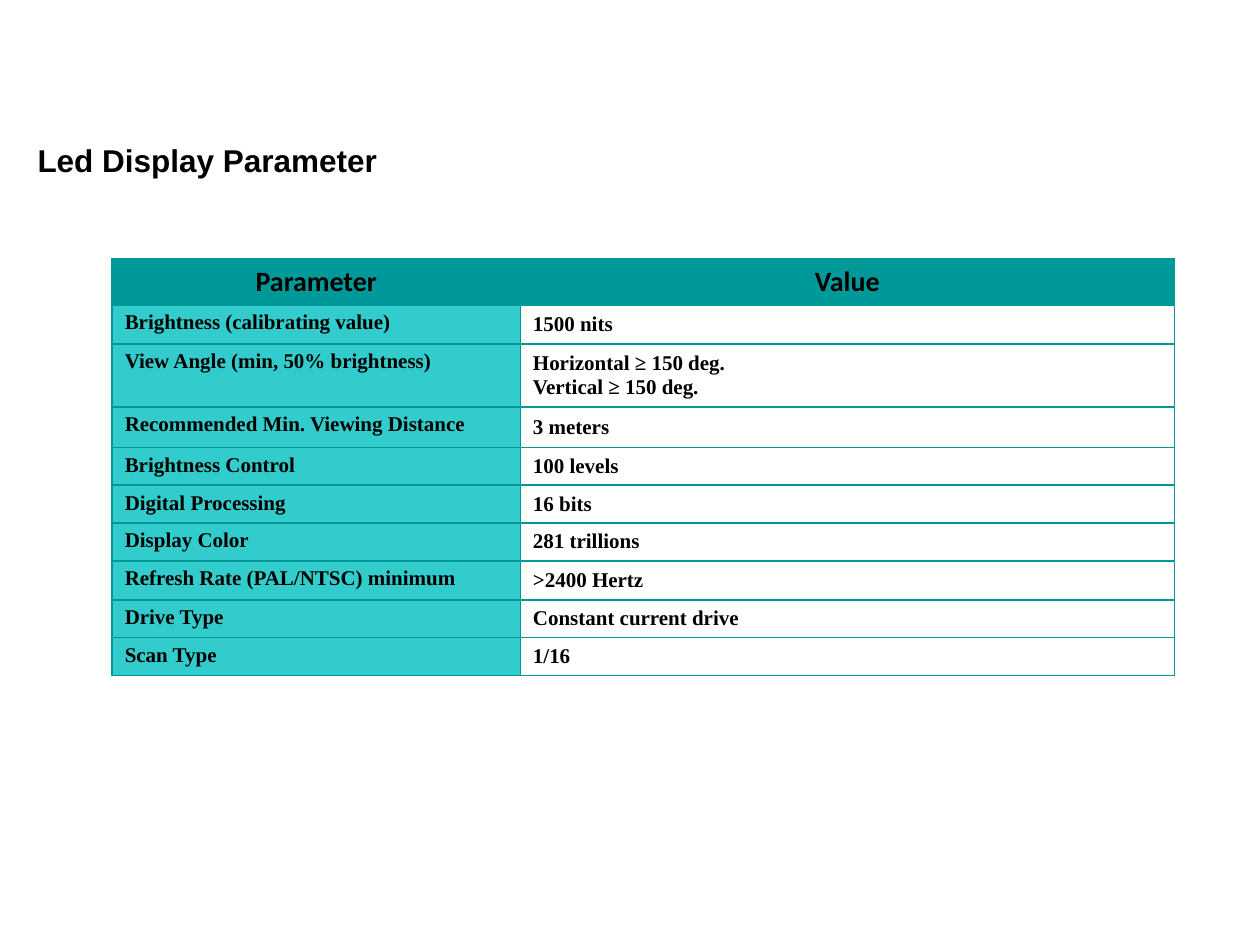
from lxml.etree import SubElement
from pptx import Presentation
from pptx.dml.color import RGBColor
from pptx.enum.text import MSO_ANCHOR, PP_ALIGN
from pptx.oxml.ns import qn
from pptx.util import Inches, Pt

HUES = {"ink": "000000", "teal": "009999", "aqua": "33CCCC"}
COLS = [3.24, 5.19]
HEADS = ["Parameter", "Value"]
ROWS = [
    (0.31, "Brightness (calibrating value)", ["1500 nits"]),
    (0.5, "View Angle (min, 50% brightness)",
     ["Horizontal ≥ 150 deg.", "Vertical ≥ 150 deg."]),
    (0.32, "Recommended Min. Viewing Distance", ["3 meters"]),
    (0.3, "Brightness Control", ["100 levels"]),
    (0.3, "Digital Processing", ["16 bits"]),
    (0.3, "Display Color", ["281 trillions"]),
    (0.31, "Refresh Rate (PAL/NTSC) minimum", [">2400 Hertz"]),
    (0.3, "Drive Type", ["Constant current drive"]),
    (0.3, "Scan Type", ["1/16"]),
]


def write(frame, lines, font, size, align=PP_ALIGN.LEFT):
    """Fill a text frame with one bold paragraph per line."""
    for i, line in enumerate(lines):
        para = frame.add_paragraph() if i else frame.paragraphs[0]
        para.alignment = align
        run = para.add_run()
        run.text = line
        run.font.name = font
        run.font.size = Pt(size)
        run.font.bold = True
        run.font.color.rgb = RGBColor.from_string(HUES["ink"])


def style(cell, fill, anchor):
    """Give a cell its borders, fill and anchor."""
    props = cell._tc.get_or_add_tcPr()
    for side in ("lnL", "lnR", "lnT", "lnB"):
        edge = SubElement(props, qn(f"a:{side}"), w=str(Pt(1)))
        paint = SubElement(edge, qn("a:solidFill"))
        SubElement(paint, qn("a:srgbClr"), val=HUES["teal"])
    if fill:
        cell.fill.solid()
        cell.fill.fore_color.rgb = RGBColor.from_string(HUES[fill])
    else:
        cell.fill.background()
    cell.vertical_anchor = anchor


def add_title(slide, left, top, width, height):
    """Place the slide title."""
    box = slide.shapes.add_textbox(
        Inches(left), Inches(top), Inches(width), Inches(height))
    frame = box.text_frame
    frame.word_wrap = False
    frame.vertical_anchor = MSO_ANCHOR.MIDDLE
    write(frame, ["Led Display Parameter"], "Arial", 18)


def add_grid(slide, left, top, width, height):
    """Place the table of display parameters."""
    table = slide.shapes.add_table(
        len(ROWS) + 1, len(COLS), Inches(left), Inches(top),
        Inches(width), Inches(height)).table
    table.first_row = table.horz_banding = False
    for col, size in zip(table.columns, COLS):
        col.width = Inches(size)
    table.rows[0].height = Inches(0.37)
    for i, head in enumerate(HEADS):
        cell = table.cell(0, i)
        style(cell, "teal", MSO_ANCHOR.MIDDLE)
        write(cell.text_frame, [head], "Calibri", 16, PP_ALIGN.CENTER)
    for i, (tall, name, lines) in enumerate(ROWS, 1):
        table.rows[i].height = Inches(tall)
        label, value = table.cell(i, 0), table.cell(i, 1)
        style(label, "aqua", MSO_ANCHOR.TOP)
        style(value, None, MSO_ANCHOR.MIDDLE)
        write(label.text_frame, [name], "Times New Roman", 12)
        write(value.text_frame, lines, "Times New Roman", 12)


def main():
    """Build and save the slide."""
    deck = Presentation()
    deck.slide_width, deck.slide_height = Inches(10), Inches(7.5)
    slide = deck.slides.add_slide(deck.slide_layouts[6])
    add_title(slide, 0.2, 1.07, 2.97, 0.4)
    add_grid(slide, 0.89, 2.05, sum(COLS), 3.31)
    deck.save("out.pptx")


if __name__ == "__main__":
    main()
